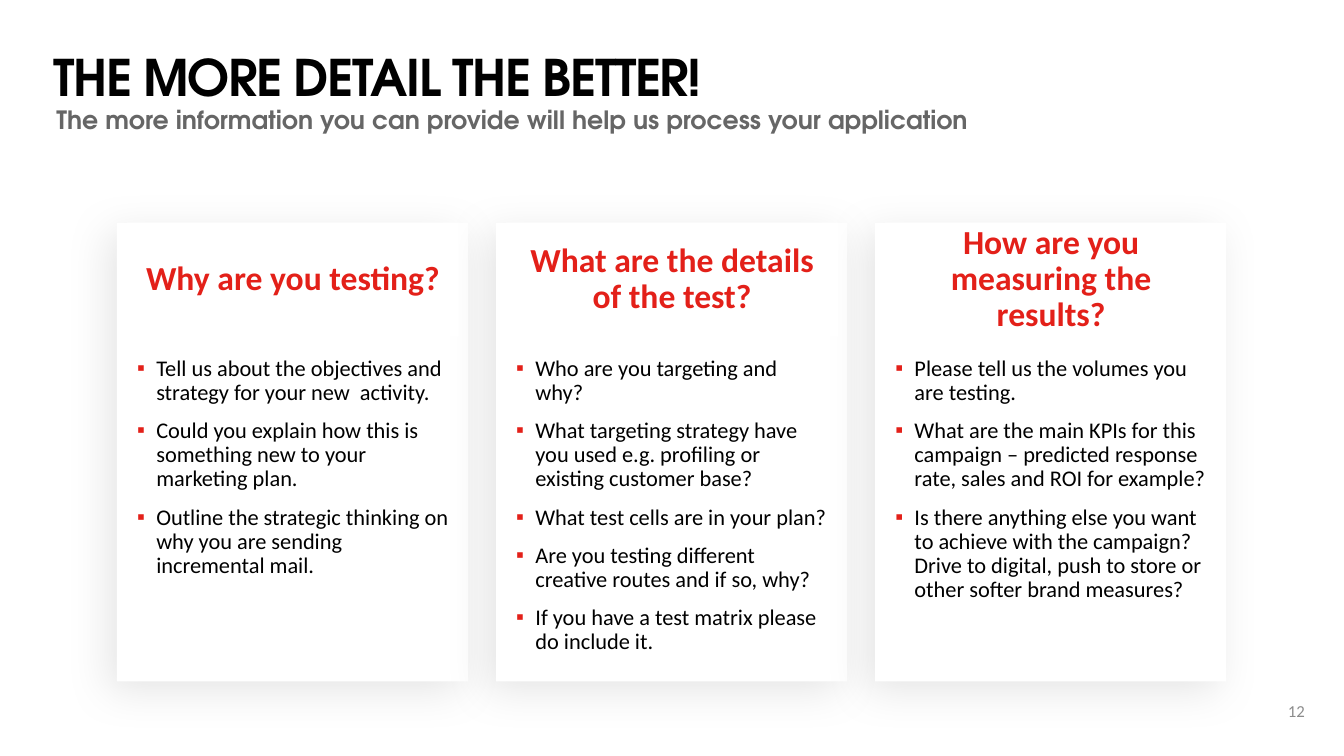
import pptx
import pptx.util
import pptx.oxml
import pptx.oxml.ns
import pptx.dml.color
import pptx.enum.text
import pptx.enum.shapes

Inches = pptx.util.Inches
Pt = pptx.util.Pt
RGBColor = pptx.dml.color.RGBColor
Align = pptx.enum.text.PP_ALIGN
Anchor = pptx.enum.text.MSO_ANCHOR
RECT = pptx.enum.shapes.MSO_SHAPE.RECTANGLE

RED = RGBColor(0xE3, 0x20, 0x19)
BLACK = RGBColor(0, 0, 0)
WHITE = RGBColor(0xFF, 0xFF, 0xFF)
GREY = RGBColor(0x66, 0x66, 0x66)
PALE = RGBColor(0x8C, 0x8C, 0x8C)
BRAND = "TeX Gyre Adventor"
PLAIN = "Calibri"
NS = pptx.oxml.ns.nsdecls("a")

BULLET = (
    f"<a:buClr {NS}><a:srgbClr val='{RED}'/></a:buClr>",
    f"<a:buFont {NS} typeface='Arial'/>",
    f"<a:buChar {NS} char='▪'/>",
)
SHADOW = (
    f"<a:effectLst {NS}><a:outerShdw blurRad='{Pt(30.9)}' dist='{Pt(9)}' "
    "dir='8100000' algn='tr' rotWithShape='0'><a:srgbClr val='000000'>"
    "<a:alpha val='10000'/></a:srgbClr></a:outerShdw></a:effectLst>"
)

COLUMNS = [
    ("Why are you testing?", [
        "Tell us about the objectives and strategy for your new  activity.",
        "Could you explain how this is something new to your marketing plan.",
        "Outline the strategic thinking on why you are sending incremental mail.",
    ]),
    ("What are the details of the test?", [
        "Who are you targeting and why?",
        "What targeting strategy have you used e.g. profiling or existing customer base?",
        "What test cells are in your plan?",
        "Are you testing different creative routes and if so, why?",
        "If you have a test matrix please do include it.",
    ]),
    ("How are you measuring the results?", [
        "Please tell us the volumes you are testing.",
        "What are the main KPIs for this campaign – predicted response rate, "
        "sales and ROI for example?",
        "Is there anything else you want to achieve with the campaign? "
        "Drive to digital, push to store or other softer brand measures?",
    ]),
]


def block(box, left, top, width, height):
    """Put a plain white rectangle on the slide."""
    shape = box.add_shape(RECT, Inches(left), Inches(top), Inches(width), Inches(height))
    shape.shadow.inherit = False
    shape.fill.solid()
    shape.fill.fore_color.rgb = WHITE
    shape.line.fill.background()
    return shape


def write(shape, place, lines, font, anchor=Anchor.TOP, align=Align.LEFT,
          inset=(0.1, 0.05), space=0.9, bullet=False):
    """Place a shape and fill it with formatted paragraphs."""
    for name, val in zip(("left", "top", "width", "height"), place):
        setattr(shape, name, Inches(val))
    frame = shape.text_frame
    side, edge = map(Inches, inset)
    form = {"word_wrap": True, "auto_size": pptx.enum.text.MSO_AUTO_SIZE.NONE,
            "vertical_anchor": anchor, "margin_left": side, "margin_right": side,
            "margin_top": edge, "margin_bottom": edge}
    for name, val in form.items():
        setattr(frame, name, val)
    frame.text = "\n".join(lines)
    for i, para in enumerate(frame.paragraphs):
        props = para._p.get_or_add_pPr()
        props.set("marL", str(Inches(0.19 if bullet else 0)))
        props.set("indent", str(Inches(-0.19 if bullet else 0)))
        for part in BULLET if bullet else (f"<a:buNone {NS}/>",):
            props.append(pptx.oxml.parse_xml(part))
        look = {"alignment": align, "line_spacing": space,
                "space_before": Pt(10 if i else 0), "space_after": Pt(0)}
        for name, val in look.items():
            setattr(para, name, val)
        for run in para.runs:
            face, size, color, bold = font
            for name, val in {"name": face, "size": Pt(size), "bold": bold}.items():
                setattr(run.font, name, val)
            run.font.color.rgb = color


deck = pptx.Presentation()
deck.slide_width = Inches(13.33)
deck.slide_height = Inches(7.5)
slide = deck.slides.add_slide(deck.slide_layouts[4])
shapes = slide.shapes
tree = shapes.element
slots = {slot.placeholder_format.idx: slot for slot in slide.placeholders}

# Title and subtitle
write(slots[0], (0.53, 0.45, 9.69, 0.52), ["THE MORE DETAIL THE BETTER!"],
      (BRAND, 36, BLACK, True), inset=(0, 0), space=Pt(44))
slots[0].text_frame.paragraphs[0].runs[0].font._element.set("spc", "-100")
write(slots[3], (0.56, 1.07, 9.69, 0.31),
      ["The more information you can provide will help us process your application"],
      (BRAND, 18, GREY, True), inset=(0, 0))

# Three cards, each with a heading and a list
backs = []
for i, (head, points) in enumerate(COLUMNS):
    left = 1.16 + 3.76 * i
    card = block(shapes, left, 2.21, 3.48, 4.55)
    props = card.element.spPr
    props.remove(props.find(pptx.oxml.ns.qn("a:effectLst")))
    props.append(pptx.oxml.parse_xml(SHADOW))
    backs.append(card)

    place = (left + 0.1, 2.21, 3.29, 1.13)
    write(block(shapes, *place), place, [head], (PLAIN, 24, RED, True),
          anchor=Anchor.MIDDLE, align=Align.CENTER)
    write(slots[(1, 2, 4)[i]], (left + 0.1, 3.49, 3.29, 3.18), points,
          (PLAIN, 16, BLACK, False), bullet=True)

# White strip at the foot, over the first card's shadow
backs.insert(1, block(shapes, 0.11, 7.28, 2.23, 0.15))

# Cards and strip go behind the text
for i, back in enumerate(backs):
    tree.insert(2 + i, back.element)

# Slide number
place = (12.63, 6.85, 0.41, 0.4)
write(shapes.add_textbox(*map(Inches, place)), place, ["12"],
      (PLAIN, 12, PALE, False), anchor=Anchor.MIDDLE, align=Align.RIGHT, space=1.0)

deck.save("out.pptx")
